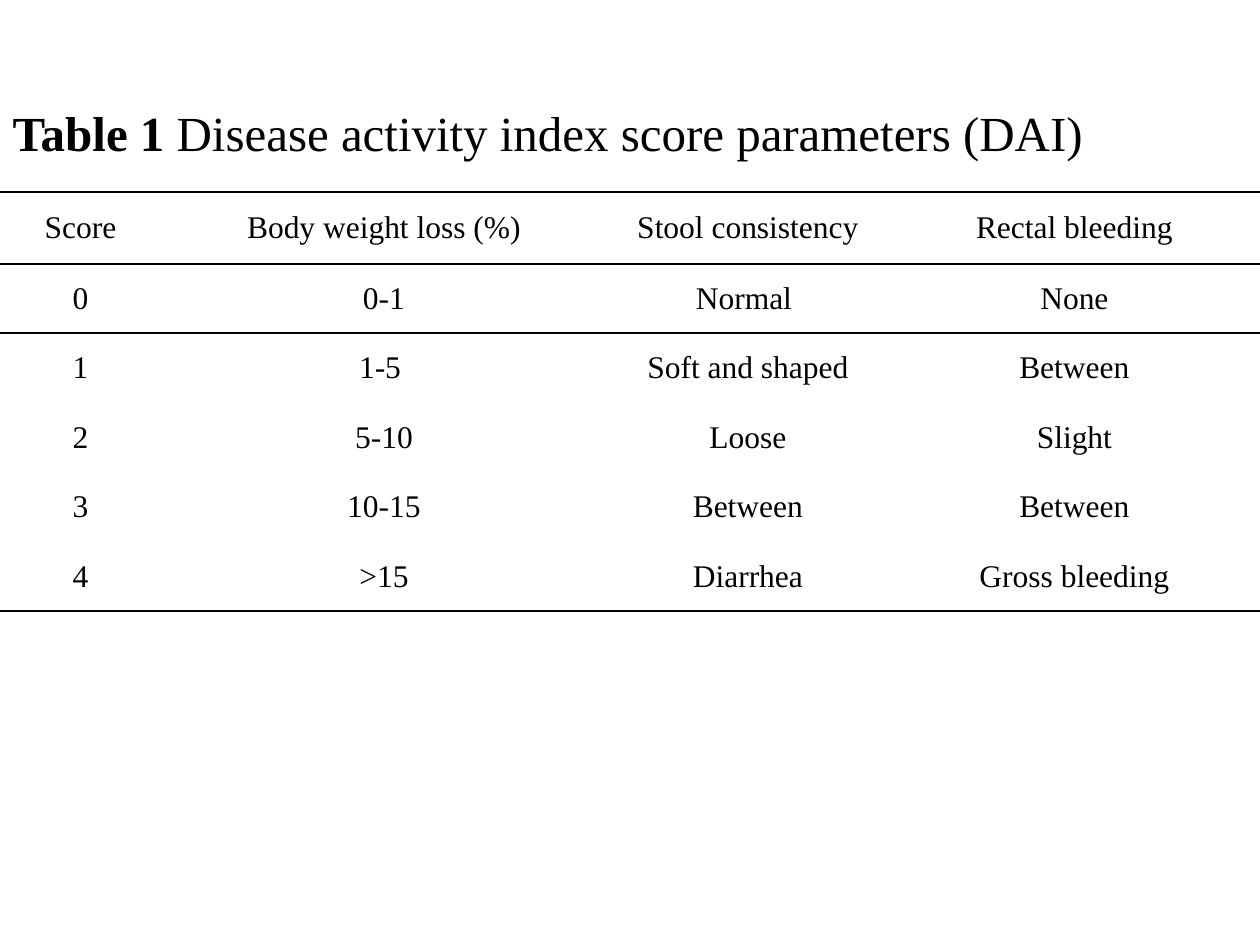
from dataclasses import dataclass

import lxml.etree
import pptx
import pptx.dml.color
import pptx.enum.text
import pptx.oxml.ns
import pptx.util


@dataclass(frozen=True)
class Theme:
    font: str = "Times New Roman"
    ink: str = "000000"
    title_size: int = 28
    table_size: int = 18
    rule_width: int = 1


@dataclass(frozen=True)
class Score:
    score: str
    weight_loss: str
    stool: str
    bleeding: str

    def texts(self) -> tuple[str, ...]:
        return self.score, self.weight_loss, self.stool, self.bleeding


THEME = Theme()
PX_PER_INCH = 126
PLAIN_STYLE = "{2D5ABB26-0587-4C30-8999-92F81FD0307C}"
COLUMN_WIDTHS = (161, 446, 282, 371)
ROW_HEIGHTS = (72, 69, 70, 69, 70, 69)
SCORES = (
    Score("Score", "Body weight loss (%)", "Stool consistency", "Rectal bleeding"),
    Score("0", "0-1", "Normal ", "None"),
    Score("1", "1-5 ", "Soft and shaped", "Between"),
    Score("2", "5-10", "Loose", "Slight"),
    Score("3", "10-15", "Between", "Between"),
    Score("4", ">15", "Diarrhea", "Gross bleeding"),
)


def px(length: int) -> pptx.util.Emu:
    return pptx.util.Emu(round(length * 914400 / PX_PER_INCH))


def format_paragraph(paragraph, size: int, alignment) -> None:
    paragraph.alignment = alignment
    paragraph.font.name = THEME.font
    paragraph.font.size = pptx.util.Pt(size)
    paragraph.font.color.rgb = pptx.dml.color.RGBColor.from_string(THEME.ink)


def add_rule(cell, side: str) -> None:
    qn = pptx.oxml.ns.qn
    rule = lxml.etree.SubElement(
        cell._tc.get_or_add_tcPr(), qn(f"a:ln{side}"),
        w=str(pptx.util.Pt(THEME.rule_width)))
    ink = lxml.etree.SubElement(rule, qn("a:solidFill"))
    lxml.etree.SubElement(ink, qn("a:srgbClr"), val=THEME.ink)


def fill_cell(cell, text: str, rules: str) -> None:
    cell.text = text
    cell.vertical_anchor = pptx.enum.text.MSO_ANCHOR.MIDDLE
    format_paragraph(cell.text_frame.paragraphs[0], THEME.table_size,
                     pptx.enum.text.PP_ALIGN.CENTER)
    for side in rules:
        add_rule(cell, side)
    cell.fill.background()


def add_title(slide) -> None:
    title = slide.shapes.title
    title.left, title.top, title.width, title.height = map(px, (0, 96, 1196, 72))
    frame = title.text_frame
    frame.word_wrap = True
    frame.auto_size = pptx.enum.text.MSO_AUTO_SIZE.NONE
    frame.vertical_anchor = pptx.enum.text.MSO_ANCHOR.TOP
    caption = frame.paragraphs[0]
    format_paragraph(caption, THEME.title_size, pptx.enum.text.PP_ALIGN.LEFT)
    number = caption.add_run()
    number.text = "Table 1"
    number.font.bold = True
    caption.add_run().text = " Disease activity index score parameters (DAI)"


def add_scores(slide) -> None:
    frame = slide.shapes.add_table(
        len(SCORES), len(COLUMN_WIDTHS), px(0), px(192),
        px(sum(COLUMN_WIDTHS)), px(sum(ROW_HEIGHTS)))
    table = frame.table
    table._tbl.tblPr.find(pptx.oxml.ns.qn("a:tableStyleId")).text = PLAIN_STYLE
    table.first_row = table.horz_banding = False
    for column, width in zip(table.columns, COLUMN_WIDTHS):
        column.width = px(width)
    rules = {0: "TB", 1: "T", len(SCORES) - 1: "B"}
    for index, (row, height, score) in enumerate(zip(table.rows, ROW_HEIGHTS, SCORES)):
        row.height = px(height)
        for cell, text in zip(row.cells, score.texts()):
            fill_cell(cell, text, rules.get(index, ""))


def main() -> None:
    presentation = pptx.Presentation()
    presentation.slide_width = px(1260)
    presentation.slide_height = px(945)
    slide = presentation.slides.add_slide(presentation.slide_layouts[5])
    add_scores(slide)
    add_title(slide)
    presentation.save("out.pptx")


if __name__ == "__main__":
    main()
